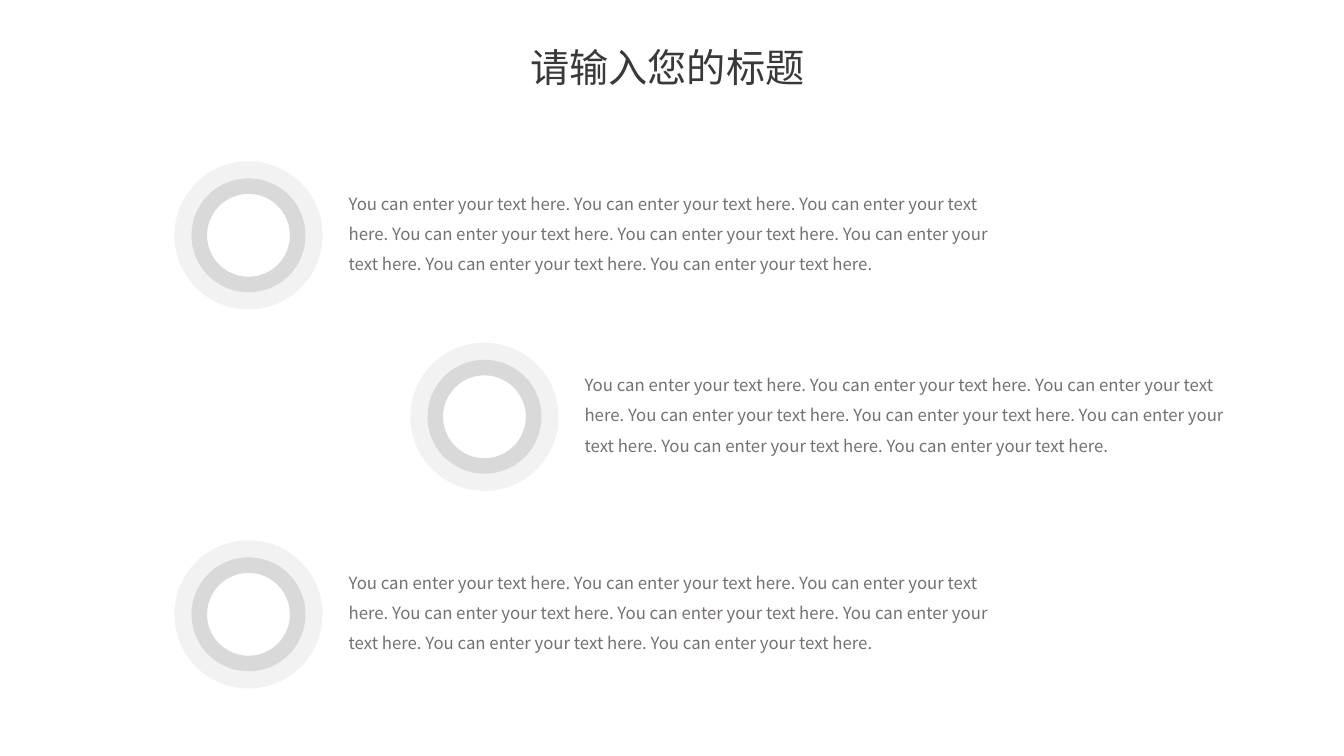
from lxml import etree
from pptx import Presentation
from pptx.dml.color import RGBColor
from pptx.enum.shapes import MSO_SHAPE
from pptx.enum.text import MSO_ANCHOR, MSO_AUTO_SIZE, PP_ALIGN
from pptx.oxml.ns import qn
from pptx.util import Inches, Pt

DONUT = MSO_SHAPE.DONUT
TOP = MSO_ANCHOR.TOP
LEFT = PP_ALIGN.LEFT
GROW = MSO_AUTO_SIZE.SHAPE_TO_FIT_TEXT
TITLE_ONLY = 5

FONT = "Noto Sans CJK SC"
TITLE_COLOR = RGBColor(0x3B, 0x38, 0x38)
BODY_COLOR = RGBColor(0x76, 0x71, 0x71)
OUTER_GREY = RGBColor(0xF2, 0xF2, 0xF2)
INNER_GREY = RGBColor(0xD9, 0xD9, 0xD9)

TITLE = "请输入您的标题"
BODY = " ".join(["You can enter your text here."] * 8)
ITEM_ORIGINS = [(1.73, 1.6), (4.07, 3.4), (1.73, 5.36)]
OUTER_SIZE, INNER_SIZE = 1.47, 1.13
RING_INSET = (OUTER_SIZE - INNER_SIZE) / 2
RING_THICKNESS = 0.136
BODY_OFFSET = 1.63


def write_text(frame, text, size, color):
    frame.text = text
    frame.word_wrap = True
    frame.auto_size = GROW
    frame.vertical_anchor = TOP
    paragraph = frame.paragraphs[0]
    paragraph.alignment = LEFT
    paragraph.line_spacing = 1.5
    paragraph.space_before = Pt(0)
    run = paragraph.runs[0]
    run.font.size = Pt(size)
    run.font.color.rgb = color
    run.font.name = FONT
    east_asian = etree.SubElement(run.font._element, qn("a:ea"))
    east_asian.set("typeface", FONT)


def add_title(slide):
    title = slide.shapes.title
    title.left, title.top = Inches(5.16), Inches(0.15)
    title.width, title.height = Inches(3.02), Inches(0.81)
    write_text(title.text_frame, TITLE, 28, TITLE_COLOR)


def add_ring(shapes, left, top, size, color):
    ring = shapes.add_shape(DONUT, Inches(left), Inches(top), Inches(size), Inches(size))
    ring.adjustments[0] = RING_THICKNESS
    ring.shadow.inherit = False
    ring.fill.solid()
    ring.fill.fore_color.rgb = color
    ring.line.fill.background()


def add_item(slide, left, top):
    """Group a double ring with the paragraph to its right."""
    shapes = slide.shapes.add_group_shape().shapes
    inner_top = top + RING_INSET
    add_ring(shapes, left, top, OUTER_SIZE, OUTER_GREY)
    add_ring(shapes, left + RING_INSET, inner_top, INNER_SIZE, INNER_GREY)
    body = shapes.add_textbox(
        Inches(left + BODY_OFFSET), Inches(inner_top), Inches(6.57), Inches(0.98)
    )
    write_text(body.text_frame, BODY, 12, BODY_COLOR)


def main():
    presentation = Presentation()
    presentation.slide_width = Inches(13.33)
    presentation.slide_height = Inches(7.5)
    slide = presentation.slides.add_slide(presentation.slide_layouts[TITLE_ONLY])
    add_title(slide)
    for left, top in ITEM_ORIGINS:
        add_item(slide, left, top)
    presentation.save("out.pptx")


if __name__ == "__main__":
    main()
